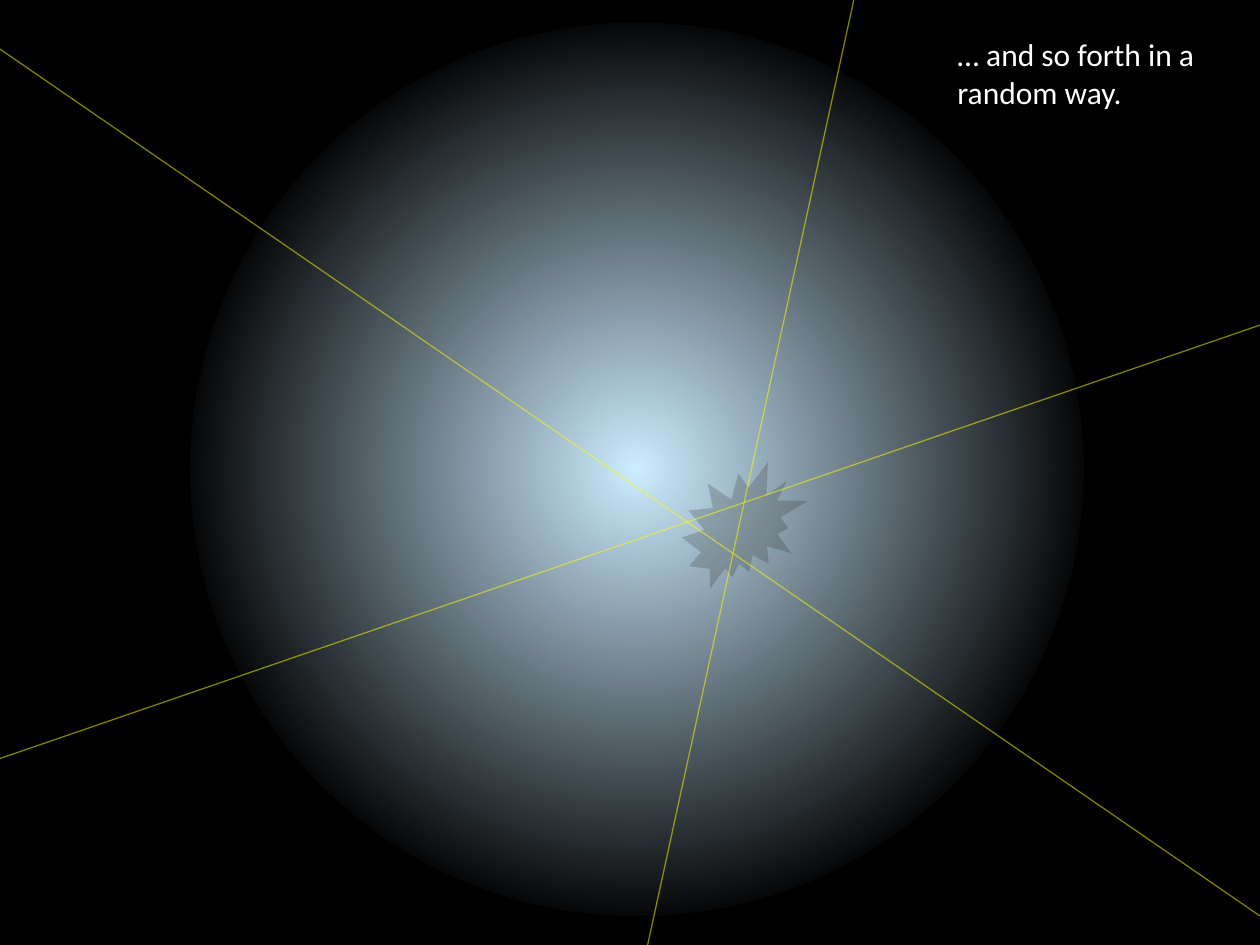
from lxml import etree
from pptx import Presentation
from pptx import util as u
from pptx.dml.color import RGBColor
from pptx.enum import shapes, text
from pptx.oxml import parse_xml
from pptx.oxml.ns import nsdecls, qn

WIDE, HIGH = 10, 7.5
BLACK, GLOW, DUST, RAY, WHITE = "000000", "CCECFF", "1E1C11", "FFFF00", "FFFFFF"
RAYS = [
    ((6.8, -0.11), (5.14, HIGH)),
    ((WIDE, 7.27), (0, 0.39)),
    ((WIDE, 2.58), (0, 6.02)),
]


def paint(fill, color, alpha=100):
    """Give a solid fill its colour and its opacity in percent."""
    fill.solid()
    fill.fore_color.rgb = RGBColor.from_string(color)
    if alpha < 100:
        tone = fill._xPr.find(qn("a:solidFill"))[0]
        etree.SubElement(tone, qn("a:alpha"), val=str(alpha * 1000))


def add_form(slide, kind, left, top, size):
    form = slide.shapes.add_shape(kind, *map(u.Inches, (left, top, size, size)))
    form.shadow.inherit = False
    form.line.fill.background()
    return form


def add_glow(slide, left, top, size):
    """Draw a disc that fades from its centre to black."""
    disc = add_form(slide, shapes.MSO_SHAPE.OVAL, left, top, size)
    disc.fill.background()
    stops = "".join(
        f'<a:gs pos="{pos * 1000}"><a:srgbClr val="{color}"/></a:gs>'
        for pos, color in ((0, GLOW), (73, BLACK))
    )
    grad = parse_xml(
        f'<a:gradFill {nsdecls("a")} rotWithShape="1"><a:gsLst>{stops}</a:gsLst>'
        '<a:path path="circle"><a:fillToRect l="50000" t="50000" r="50000" b="50000"/>'
        "</a:path></a:gradFill>"
    )
    props = disc._element.spPr
    props.replace(props.find(qn("a:noFill")), grad)


def add_ray(slide, start, end):
    ray = slide.shapes.add_connector(
        shapes.MSO_CONNECTOR.STRAIGHT, *map(u.Inches, start + end)
    )
    ray.line.width = u.Pt(0.75)
    paint(ray.line.fill, RAY, 50)
    etree.SubElement(ray._element.spPr, qn("a:effectLst"))


def add_note(slide, words, left, top, width, height):
    box = slide.shapes.add_textbox(*map(u.Inches, (left, top, width, height)))
    frame = box.text_frame
    frame.word_wrap = True
    frame.auto_size = text.MSO_AUTO_SIZE.SHAPE_TO_FIT_TEXT
    run = frame.paragraphs[0].add_run()
    run.text = words
    run.font.name = "Calibri"
    run.font.size = u.Pt(18)
    paint(run.font.fill, WHITE)


def main():
    deck = Presentation()
    deck.slide_width, deck.slide_height = u.Inches(WIDE), u.Inches(HIGH)
    slide = deck.slides.add_slide(deck.slide_layouts[6])
    paint(slide.background.fill, BLACK)
    add_glow(slide, 1.51, 0.18, 7.09)
    burst = add_form(slide, shapes.MSO_SHAPE.EXPLOSION2, 5.41, 3.67, 1)
    paint(burst.fill, DUST, 20)
    for start, end in RAYS:
        add_ray(slide, start, end)
    add_note(slide, "… and so forth in a random way.", 7.5, 0.23, 2.27, 0.71)
    deck.save("out.pptx")


if __name__ == "__main__":
    main()
